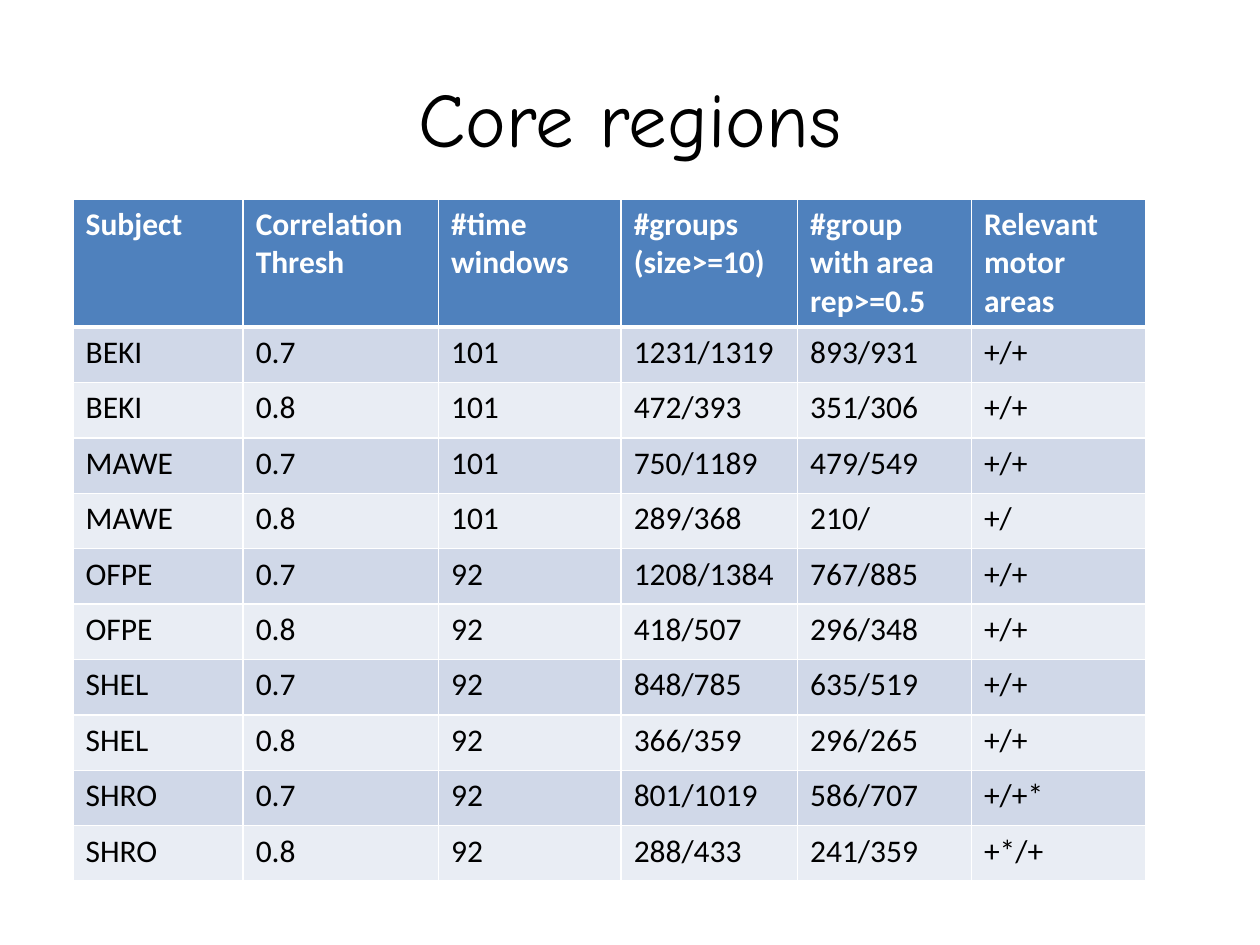
from lxml import etree
from pptx import Presentation
from pptx.dml.color import RGBColor
from pptx.enum.text import MSO_ANCHOR, PP_ALIGN
from pptx.oxml.ns import qn
from pptx.util import Inches, Pt

COLORS = {
    "header": "4F81BD",
    "odd": "D0D8E8",
    "even": "E9EDF4",
    "white": "FFFFFF",
    "black": "000000",
}
HEADINGS = [
    "Subject", "Correlation Thresh", "#time windows",
    "#groups (size>=10)", "#group with area rep>=0.5", "Relevant motor areas",
]
RESULTS = [
    ["BEKI", "0.7", "101", "1231/1319", "893/931", "+/+"],
    ["BEKI", "0.8", "101", "472/393", "351/306", "+/+"],
    ["MAWE", "0.7", "101", "750/1189", "479/549", "+/+"],
    ["MAWE", "0.8", "101", "289/368", "210/", "+/"],
    ["OFPE", "0.7", "92", "1208/1384", "767/885", "+/+"],
    ["OFPE", "0.8", "92", "418/507", "296/348", "+/+"],
    ["SHEL", "0.7", "92", "848/785", "635/519", "+/+"],
    ["SHEL", "0.8", "92", "366/359", "296/265", "+/+"],
    ["SHRO", "0.7", "92", "801/1019", "586/707", "+/+*"],
    ["SHRO", "0.8", "92", "288/433", "241/359", "+*/+"],
]
COLUMN_WIDTHS = [1.35, 1.55, 1.45, 1.4, 1.38, 1.38]
HEADER_HEIGHT, ROW_HEIGHT = 0.76, 0.44


def format_text(para, text, color, **values):
    span = para.add_run()
    span.text = text
    span.font.color.rgb = RGBColor.from_string(COLORS[color])
    for name, value in values.items():
        setattr(span.font, name, value)


def add_borders(cell, bottom_width):
    """Draw white cell borders; the schema wants them ahead of the fill."""
    properties = cell._tc.get_or_add_tcPr()
    widths = {"lnL": 1, "lnR": 1, "lnT": 1, "lnB": bottom_width}
    for index, (side, width) in enumerate(widths.items()):
        line = etree.Element(qn(f"a:{side}"), w=str(Pt(width)))
        fill = etree.SubElement(line, qn("a:solidFill"))
        etree.SubElement(fill, qn("a:srgbClr"), val=COLORS["white"])
        properties.insert(index, line)


deck = Presentation()
deck.slide_width, deck.slide_height = Inches(10), Inches(7.5)
page = deck.slides.add_slide(deck.slide_layouts[5])

title = page.shapes.title
title.left, title.top = Inches(0.5), Inches(0.3)
title.width, title.height = Inches(9), Inches(1.25)
title.text_frame.vertical_anchor = MSO_ANCHOR.MIDDLE
para = title.text_frame.paragraphs[0]
para.alignment = PP_ALIGN.CENTER
format_text(para, "Core regions", "black", name="Comic Neue", size=Pt(44))

rows = [HEADINGS] + RESULTS
frame = page.shapes.add_table(
    len(rows), len(HEADINGS), Inches(0.58), Inches(1.58), Inches(8.5), Inches(5.39)
)
table = frame.table
for column, width in zip(table.columns, COLUMN_WIDTHS):
    column.width = Inches(width)

for row_index, texts in enumerate(rows):
    is_header = row_index == 0
    table.rows[row_index].height = Inches(HEADER_HEIGHT if is_header else ROW_HEIGHT)
    fill_name = "header" if is_header else ("odd" if row_index % 2 else "even")
    for column_index, text in enumerate(texts):
        cell = table.cell(row_index, column_index)
        cell.fill.solid()
        cell.fill.fore_color.rgb = RGBColor.from_string(COLORS[fill_name])
        add_borders(cell, 3 if is_header else 1)
        format_text(
            cell.text_frame.paragraphs[0], text, "white" if is_header else "black",
            name="Calibri", size=Pt(18), bold=is_header,
        )
    # The top border of the first result row is the header's thick rule.
    if row_index == 1:
        for cell in table.rows[row_index].cells:
            cell._tc.tcPr.find(qn("a:lnT")).set("w", str(Pt(3)))
frame.height = Inches(5.39)

deck.save("out.pptx")
